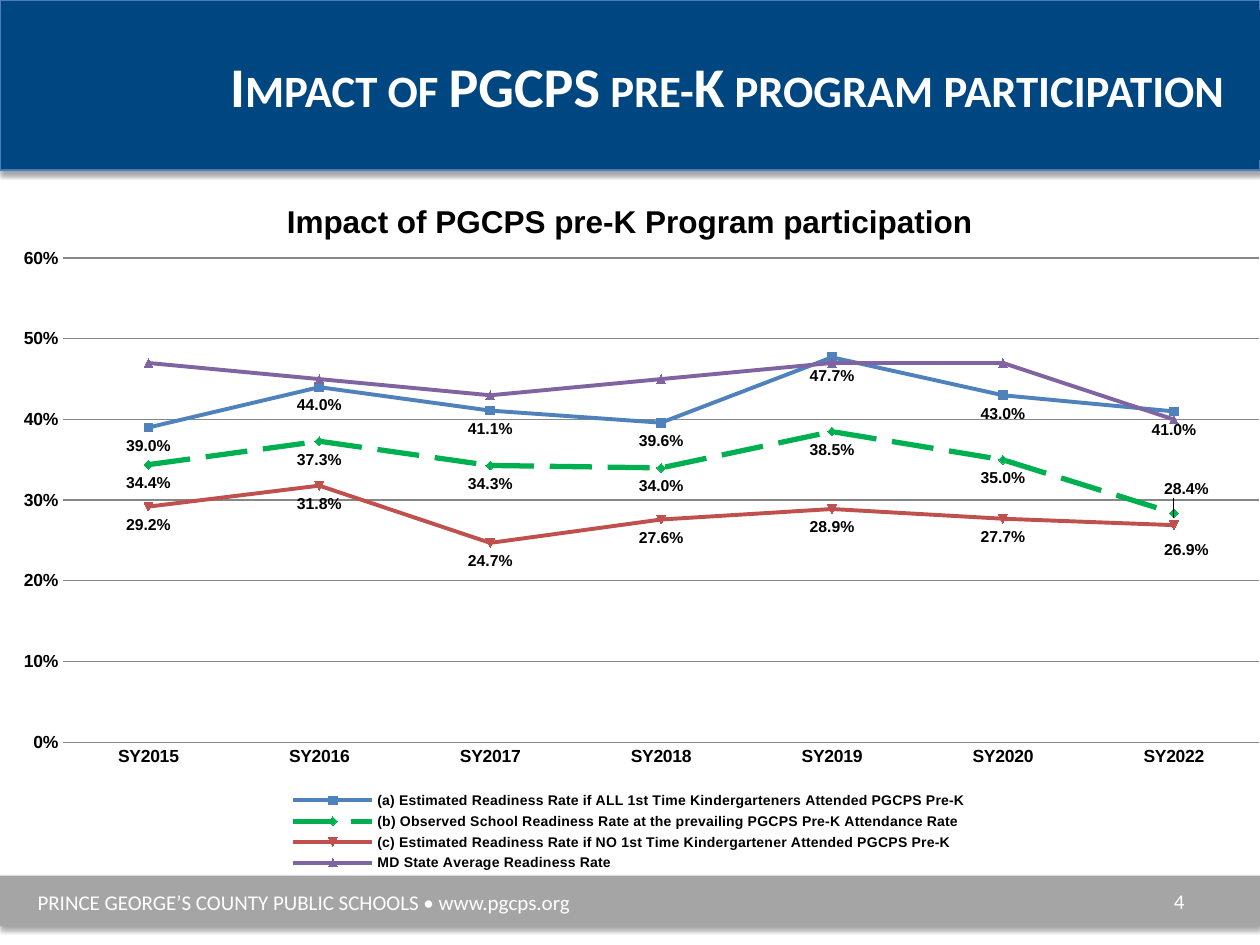
from pptx import Presentation
from pptx.chart.data import CategoryChartData
from pptx.dml.color import RGBColor
from pptx.enum.chart import XL_CHART_TYPE, XL_LABEL_POSITION, XL_LEGEND_POSITION, XL_TICK_MARK
from pptx.enum.dml import MSO_LINE
from pptx.enum.shapes import MSO_SHAPE
from pptx.enum.text import MSO_ANCHOR, MSO_AUTO_SIZE, PP_ALIGN
from pptx.oxml import parse_xml
from pptx.oxml.ns import nsdecls
from pptx.util import Pt

NAVY, GREY, WHITE, BLACK = "004681", "A5A5A5", "FFFFFF", "000000"
YEARS = ["SY2015", "SY2016", "SY2017", "SY2018", "SY2019", "SY2020", "SY2022"]
SERIES = [
    ("(a) Estimated Readiness Rate if ALL 1st Time Kindergarteners Attended PGCPS Pre-K",
     [0.39, 0.44, 0.411, 0.396, 0.477, 0.43, 0.41], "4F81BD", "4F81BD"),
    ("(b) Observed School Readiness Rate at the prevailing PGCPS Pre-K Attendance Rate",
     [0.344, 0.373, 0.343, 0.34, 0.385, 0.35, 0.284], "00B050", "92D050"),
    ("(c) Estimated Readiness Rate if NO 1st Time Kindergartener Attended PGCPS Pre-K",
     [0.292, 0.318, 0.247, 0.276, 0.289, 0.277, 0.269], "C0504D", "FF0000"),
    ("MD State Average Readiness Rate",
     [0.47, 0.45, 0.43, 0.45, 0.47, 0.47, 0.4], "8064A2", "8064A2"),
]
LABELLED = 3
LAST_LABEL_SHIFTS = {1: (0.01, -0.06), 2: (0.01, 0.01)}


def rgb(color):
    return RGBColor.from_string(color)


def style_font(font, size, color, bold=False, name="Calibri"):
    font.name, font.size, font.bold = name, Pt(size), bold
    font.color.rgb = rgb(color)


def add_band(s, box, fill, line=None):
    sp = s.shapes.add_shape(MSO_SHAPE.RECTANGLE, *map(Pt, box))
    sp.fill.solid()
    sp.fill.fore_color.rgb = rgb(fill)
    if line:
        sp.line.color.rgb = rgb(line)
        sp.line.width = Pt(0.75)
    else:
        sp.line.fill.background()
    sp.shadow.inherit = False
    sp._element.spPr.remove(sp._element.spPr[-1])
    sp._element.spPr.append(parse_xml(
        f'<a:effectLst {nsdecls("a")}><a:outerShdw blurRad="{Pt(3.1)}" dist="{Pt(1.8)}" '
        f'dir="5400000" rotWithShape="0"><a:srgbClr val="{BLACK}"><a:alpha val="35000"/>'
        '</a:srgbClr></a:outerShdw></a:effectLst>'))
    return sp


def add_label(s, box, text, align=PP_ALIGN.LEFT, anchor=MSO_ANCHOR.TOP):
    tf = s.shapes.add_textbox(*map(Pt, box)).text_frame
    tf.word_wrap = True
    tf.vertical_anchor = anchor
    p = tf.paragraphs[0]
    p.alignment = align
    r = p.add_run()
    r.text = text
    style_font(r.font, 12, WHITE)


def add_header(s, box):
    left, top, width, height = box
    band = add_band(s, box, NAVY, "4A7DBA")
    s.shapes._spTree.insert(2, band._element)
    title = s.shapes.title
    title.left, title.top = Pt(left + 111), Pt(top + 6)
    title.width, title.height = Pt(width - 111), Pt(height - 12)
    title.line.color.rgb = rgb(NAVY)
    title.line.width = Pt(0.75)
    tf = title.text_frame
    tf.word_wrap = True
    tf.auto_size = MSO_AUTO_SIZE.NONE
    tf.vertical_anchor = MSO_ANCHOR.MIDDLE
    p = tf.paragraphs[0]
    p.alignment = PP_ALIGN.CENTER
    r = p.add_run()
    r.text = "Impact of PGCPS pre-K program participation"
    style_font(r.font, 32, WHITE, True)
    r.font._element.set("cap", "small")


def add_footer(s, box):
    left, top, width, height = box
    add_band(s, box, GREY)
    add_label(s, (left + 14.4, top + 4.4, 492.5, 21.6),
              "PRINCE GEORGE’S COUNTY PUBLIC SCHOOLS • www.pgcps.org")
    add_label(s, (left + width - 204, top, 168, height), "4",
              PP_ALIGN.RIGHT, MSO_ANCHOR.MIDDLE)


def manual_layout(x, y, size=None):
    target = modes = extent = ""
    if size:
        target = '<c:layoutTarget val="inner"/>'
        modes = '<c:xMode val="edge"/><c:yMode val="edge"/>'
        extent = f'<c:w val="{size[0]}"/><c:h val="{size[1]}"/>'
    return parse_xml(f'<c:layout {nsdecls("c")}><c:manualLayout>{target}{modes}'
                     f'<c:x val="{x}"/><c:y val="{y}"/>{extent}</c:manualLayout></c:layout>')


def label_series(series, shift):
    labels = series.data_labels
    labels.show_value = True
    labels.number_format = "0.0%"
    labels.number_format_is_linked = False
    labels.position = XL_LABEL_POSITION.BELOW
    style_font(labels.font, 9, BLACK, True, "Arial")
    if shift:
        label = series.points[len(YEARS) - 1].data_label
        style_font(label.font, 9, BLACK, True, "Arial")
        label.position = XL_LABEL_POSITION.BELOW
        idx = labels._element.find("{*}dLbl").find("{*}idx")
        idx.addnext(parse_xml(
            f'<c:numFmt {nsdecls("c")} formatCode="0.0%" sourceLinked="0"/>'))
        idx.addnext(manual_layout(*shift))


def format_axes(chart):
    cat, val = chart.category_axis, chart.value_axis
    for axis in (cat, val):
        axis.major_tick_mark = axis.minor_tick_mark = XL_TICK_MARK.NONE
        style_font(axis.tick_labels.font, 10, BLACK, True, "Arial")
    val.minimum_scale, val.maximum_scale, val.major_unit = 0, 0.6, 0.1
    val.tick_labels.number_format = "0%"
    val.tick_labels.number_format_is_linked = False
    val.format.line.fill.background()
    for line in (cat.format.line, val.major_gridlines.format.line):
        line.color.rgb = rgb("868686")
        line.width = Pt(0.75)


def add_readiness_chart(s, box):
    data = CategoryChartData(number_format="0.0%")
    data.categories = YEARS
    for name, values, _, _ in SERIES:
        data.add_series(name, values)
    chart = s.shapes.add_chart(XL_CHART_TYPE.LINE_MARKERS, *map(Pt, box), data).chart
    style_font(chart.font, 10, BLACK, name="Arial")
    chart.has_title = True
    r = chart.chart_title.text_frame.paragraphs[0].add_run()
    r.text = "Impact of PGCPS pre-K Program participation"
    style_font(r.font, 18, BLACK, True, "Arial")
    chart.chart_title.include_in_layout = False
    chart.has_legend = True
    chart.legend.position = XL_LEGEND_POSITION.BOTTOM
    chart.legend.include_in_layout = False
    style_font(chart.legend.font, 8, BLACK, True, "Arial")
    format_axes(chart)

    for i, (series, (_, _, color, marker_fill)) in enumerate(zip(chart.plots[0].series, SERIES)):
        series.smooth = False
        series.format.line.color.rgb = rgb(color)
        series.format.line.width = Pt(2.25)
        series.marker.size = 5
        series.marker.format.fill.solid()
        series.marker.format.fill.fore_color.rgb = rgb(marker_fill)
        series.marker.format.line.color.rgb = rgb(color)
        if i < LABELLED:
            label_series(series, LAST_LABEL_SHIFTS.get(i))
    observed = chart.plots[0].series[1].format.line
    observed.width = Pt(3)
    observed.dash_style = MSO_LINE.LONG_DASH

    plot_area = chart._chartSpace.chart.plotArea
    for old in plot_area.findall("{*}layout"):
        plot_area.remove(old)
    plot_area.insert(0, manual_layout(0.05, 0.12, (0.95, 0.69)))


def main():
    prs = Presentation()
    prs.slide_width, prs.slide_height = Pt(720), Pt(540)
    s = prs.slides.add_slide(prs.slide_layouts[5])
    add_header(s, (0, 0, 720, 97.2))
    add_footer(s, (0, 500.4, 720, 28.8))
    add_readiness_chart(s, (0, 99.4, 720, 401))
    prs.save("out.pptx")


if __name__ == "__main__":
    main()
